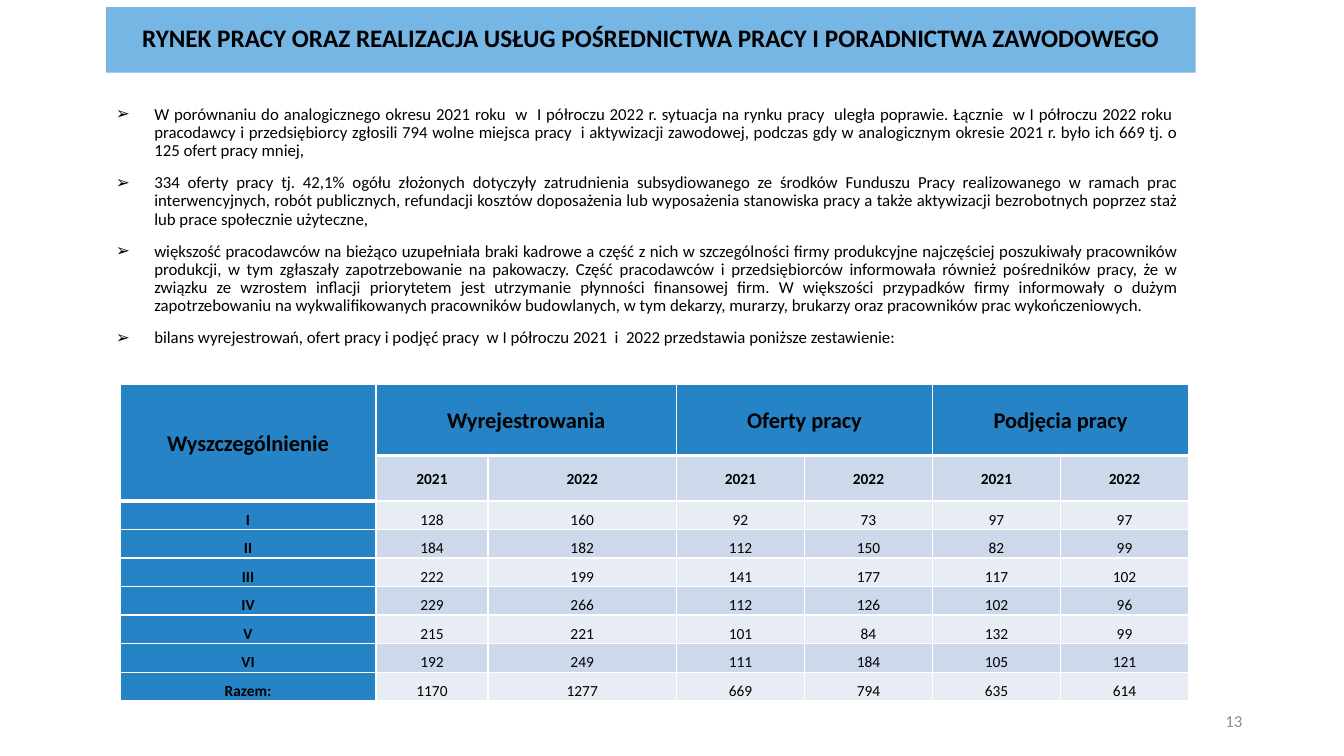
from dataclasses import dataclass

from lxml.etree import SubElement
from pptx import Presentation
from pptx.dml.color import RGBColor
from pptx.enum.text import MSO_ANCHOR, MSO_AUTO_SIZE, PP_ALIGN
from pptx.oxml import parse_xml
from pptx.oxml.ns import nsdecls, qn
from pptx.util import Emu, Pt

EMU_PER_PX = 9144
FONT = "Calibri"
COLORS = {
    "banner": "75B6E5",
    "header": "2683C6",
    "band_dark": "CDD9EA",
    "band_light": "E8EDF5",
    "border": "FFFFFF",
    "text": "000000",
    "page_number": "8C8C8C",
}

TITLE = "RYNEK PRACY ORAZ REALIZACJA USŁUG POŚREDNICTWA PRACY I PORADNICTWA ZAWODOWEGO"
BULLETS = [
    "W porównaniu do analogicznego okresu 2021 roku  w  I półroczu 2022 r. sytuacja na rynku pracy  "
    "uległa poprawie. Łącznie  w I półroczu 2022 roku  pracodawcy i przedsiębiorcy zgłosili 794 wolne "
    "miejsca pracy  i aktywizacji zawodowej, podczas gdy w analogicznym okresie 2021 r. było ich 669 tj. "
    "o 125 ofert pracy mniej,",
    "334 oferty pracy tj. 42,1% ogółu złożonych dotyczyły zatrudnienia subsydiowanego ze środków "
    "Funduszu Pracy realizowanego w ramach prac interwencyjnych, robót publicznych, refundacji kosztów "
    "doposażenia lub wyposażenia stanowiska pracy a także aktywizacji bezrobotnych poprzez staż lub "
    "prace społecznie użyteczne,",
    "większość pracodawców na bieżąco uzupełniała braki kadrowe a część z nich w szczególności firmy "
    "produkcyjne najczęściej poszukiwały pracowników produkcji, w tym zgłaszały zapotrzebowanie na "
    "pakowaczy. Część pracodawców i przedsiębiorców informowała również pośredników pracy, że w związku "
    "ze wzrostem inflacji priorytetem jest utrzymanie płynności finansowej firm. W większości przypadków "
    "firmy informowały o dużym zapotrzebowaniu na wykwalifikowanych pracowników budowlanych, w tym "
    "dekarzy, murarzy, brukarzy oraz pracowników prac wykończeniowych.",
    "bilans wyrejestrowań, ofert pracy i podjęć pracy  w I półroczu 2021  i  2022 przedstawia poniższe "
    "zestawienie:",
]
TABLE_ROWS = [
    ["Wyszczególnienie", "Wyrejestrowania", "", "Oferty pracy", "", "Podjęcia pracy", ""],
    [""] + ["2021", "2022"] * 3,
    ["I", "128", "160", "92", "73", "97", "97"],
    ["II", "184", "182", "112", "150", "82", "99"],
    ["III", "222", "199", "141", "177", "117", "102"],
    ["IV", "229", "266", "112", "126", "102", "96"],
    ["V", "215", "221", "101", "84", "132", "99"],
    ["VI", "192", "249", "111", "184", "105", "121"],
    ["Razem:", "1170", "1277", "669", "794", "635", "614"],
]
COLUMN_WIDTHS = [254, 111, 187, 127, 127, 127, 127]
ROW_HEIGHTS = [71, 45] + [28] * 7


@dataclass(frozen=True)
class Box:
    left: int
    top: int
    width: int
    height: int

    def emu(self) -> tuple:
        return tuple(px(n) for n in (self.left, self.top, self.width, self.height))


@dataclass(frozen=True)
class TextStyle:
    size: int
    bold: bool = False
    align: PP_ALIGN = PP_ALIGN.CENTER
    line_spacing: float = 1.0
    before: int = 0
    after: int = 0
    color: str = "text"


TITLE_STYLE = TextStyle(18, True, line_spacing=0.9)
BULLET_STYLE = TextStyle(12, align=PP_ALIGN.JUSTIFY, line_spacing=0.9, before=10)
NUMBER_STYLE = TextStyle(12, align=PP_ALIGN.RIGHT, color="page_number")
GROUP_STYLE = TextStyle(16, True, line_spacing=1.07, after=8)
YEAR_STYLE = TextStyle(11, True, line_spacing=1.07, after=8)
MONTH_STYLE = TextStyle(11, True, line_spacing=1.5, after=8)
VALUE_STYLE = TextStyle(11, line_spacing=1.5, after=8)


def px(length: int) -> Emu:
    return Emu(length * EMU_PER_PX)


def rgb(name: str) -> RGBColor:
    return RGBColor.from_string(COLORS[name])


def write(frame, text: str, style: TextStyle) -> None:
    frame.text = text
    for para in frame.paragraphs:
        para.alignment = style.align
        para.line_spacing = style.line_spacing
        para.space_before = Pt(style.before)
        para.space_after = Pt(style.after)
        for span in para.runs:
            span.font.name = FONT
            span.font.size = Pt(style.size)
            span.font.bold = style.bold
            span.font.color.rgb = rgb(style.color)


def place(shape, box: Box, anchor: MSO_ANCHOR) -> None:
    shape.left, shape.top, shape.width, shape.height = box.emu()
    frame = shape.text_frame
    frame.word_wrap = True
    frame.auto_size = MSO_AUTO_SIZE.NONE
    frame.vertical_anchor = anchor


def add_bullets(frame) -> None:
    for para in frame.paragraphs:
        properties = para._p.get_or_add_pPr()
        properties.set("marL", str(px(38)))
        properties.set("indent", str(px(-38)))
        SubElement(properties, qn("a:buChar")).set("char", "➢")


def set_borders(cell, row: int, column: int) -> None:
    heavy_bottom = row == 0 or (row == 1 and column == 0)
    heavy_top = (row == 1 and column > 0) or (row == 2 and column == 0)
    widths = {"lnL": 1, "lnR": 1, "lnT": 3 if heavy_top else 1, "lnB": 3 if heavy_bottom else 1}
    properties = cell._tc.get_or_add_tcPr()
    for index, (side, width) in enumerate(widths.items()):
        properties.insert(index, parse_xml(
            f'<a:{side} {nsdecls("a")} w="{Pt(width)}"><a:solidFill>'
            f'<a:srgbClr val="{COLORS["border"]}"/></a:solidFill></a:{side}>'
        ))


def cell_style(row: int, column: int) -> TextStyle:
    if row == 0:
        return GROUP_STYLE
    if row == 1:
        return YEAR_STYLE
    return MONTH_STYLE if column == 0 else VALUE_STYLE


def cell_fill(row: int, column: int) -> str:
    if row == 0 or column == 0:
        return "header"
    return "band_dark" if row % 2 else "band_light"


def add_balance_table(page) -> None:
    box = Box(119, 381, sum(COLUMN_WIDTHS), sum(ROW_HEIGHTS))
    table = page.shapes.add_table(len(ROW_HEIGHTS), len(COLUMN_WIDTHS), *box.emu()).table
    table.first_row = table.horz_banding = False
    for column, width in zip(table.columns, COLUMN_WIDTHS):
        column.width = px(width)
    for line, height in zip(table.rows, ROW_HEIGHTS):
        line.height = px(height)
    for row, texts in enumerate(TABLE_ROWS):
        for column, text in enumerate(texts):
            cell = table.cell(row, column)
            cell.margin_left = cell.margin_right = px(7)
            cell.margin_top = cell.margin_bottom = 0
            cell.vertical_anchor = MSO_ANCHOR.MIDDLE if row < 2 else MSO_ANCHOR.TOP
            cell.fill.solid()
            cell.fill.fore_color.rgb = rgb(cell_fill(row, column))
            write(cell.text_frame, text, cell_style(row, column))
            set_borders(cell, row, column)
    table.cell(0, 0).merge(table.cell(1, 0))
    for column in (1, 3, 5):
        table.cell(0, column).merge(table.cell(0, column + 1))


def main() -> None:
    deck = Presentation()
    deck.slide_width, deck.slide_height = px(1333), px(750)
    page = deck.slides.add_slide(deck.slide_layouts[0])

    title, body = page.placeholders
    place(title, Box(105, 7, 1081, 65), MSO_ANCHOR.MIDDLE)
    title.fill.solid()
    title.fill.fore_color.rgb = rgb("banner")
    write(title.text_frame, TITLE, TITLE_STYLE)

    place(body, Box(105, 100, 1074, 591), MSO_ANCHOR.TOP)
    write(body.text_frame, "\n".join(BULLETS), BULLET_STYLE)
    add_bullets(body.text_frame)

    number_box = Box(942, 695, 300, 40)
    number = page.shapes.add_textbox(*number_box.emu())
    place(number, number_box, MSO_ANCHOR.MIDDLE)
    write(number.text_frame, "13", NUMBER_STYLE)

    add_balance_table(page)
    deck.save("out.pptx")


if __name__ == "__main__":
    main()
